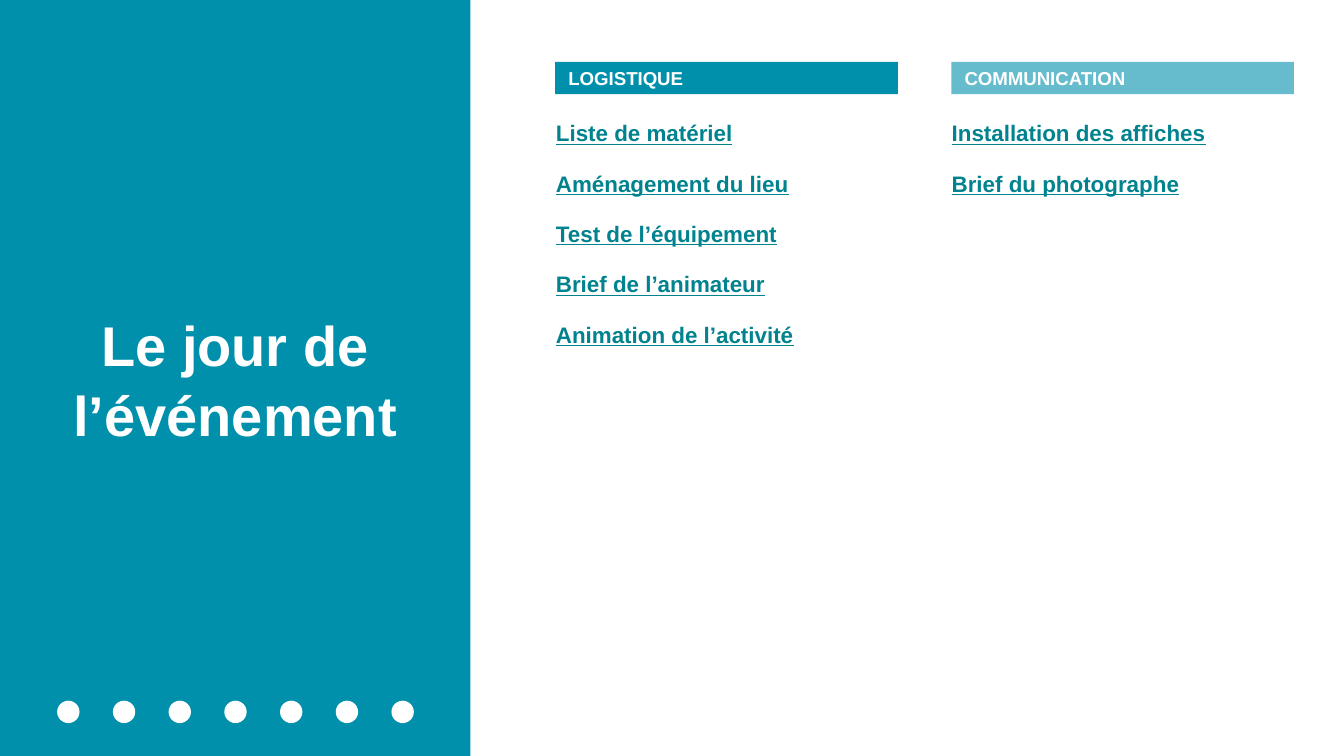
from lxml import etree
from pptx import Presentation
from pptx.dml.color import RGBColor
from pptx.enum.shapes import MSO_SHAPE
from pptx.enum.text import MSO_ANCHOR, PP_ALIGN
from pptx.oxml.ns import qn
from pptx.util import Pt

RECT, OVAL = MSO_SHAPE.RECTANGLE, MSO_SHAPE.OVAL
TOP, MIDDLE = MSO_ANCHOR.TOP, MSO_ANCHOR.MIDDLE
LEFT, CENTER = PP_ALIGN.LEFT, PP_ALIGN.CENTER

FONT = "Arial"
BLUE, WHITE, TEAL = "0090AC", "FFFFFF", "00838F"
LINE_SPACING = 1.04
PANEL_WIDTH = 252
COLUMN_WIDTH = 183.6
DOT_COUNT, DOT_SIZE, DOT_PITCH = 7, 12, 29.85

# left edge of header, left edge of list, header opacity in percent, header, tasks
COLUMNS = [
    (297.4, 297.8, 100, "LOGISTIQUE",
     ["Liste de matériel", "Aménagement du lieu", "Test de l’équipement",
      "Brief de l’animateur", "Animation de l’activité"]),
    (509.6, 509.8, 60, "COMMUNICATION",
     ["Installation des affiches", "Brief du photographe"]),
]


def rgb(color):
    return RGBColor.from_string(color)


def add_shape(slide, kind, x, y, w, h, color, opacity=100):
    sp = slide.shapes.add_shape(kind, Pt(x), Pt(y), Pt(w), Pt(h))
    sp.shadow.inherit = False
    sp.line.fill.background()
    sp.fill.solid()
    sp.fill.fore_color.rgb = rgb(color)
    if opacity < 100:
        clr = sp.fill._xPr.find(f".//{qn('a:srgbClr')}")
        etree.SubElement(clr, qn("a:alpha"), val=str(opacity * 1000))
    return sp


def set_text(sp, lines, size, color, align=LEFT, anchor=MIDDLE, inset=7.2,
             space_before=0, underline=False):
    tf = sp.text_frame
    tf.word_wrap = True
    tf.vertical_anchor = anchor
    tf.margin_left = tf.margin_right = Pt(inset)
    tf.margin_top = tf.margin_bottom = Pt(inset)
    tf.text = "\n".join(lines)
    for i, p in enumerate(tf.paragraphs):
        p.alignment = align
        p.line_spacing = LINE_SPACING
        p.space_before = Pt(space_before if i else 0)
        font = p.runs[0].font
        font.name, font.size, font.bold = FONT, Pt(size), True
        font.underline = underline
        font.color.rgb = rgb(color)


def add_text(slide, x, y, w, h, lines, size, color, **style):
    sp = slide.shapes.add_textbox(Pt(x), Pt(y), Pt(w), Pt(h))
    set_text(sp, lines, size, color, **style)


def add_column(slide, header_x, list_x, opacity, header, tasks):
    sp = add_shape(slide, RECT, header_x, 33.2, COLUMN_WIDTH, 17.2, BLUE, opacity)
    set_text(sp, [header], 10, WHITE)
    add_text(slide, list_x, 63.4, COLUMN_WIDTH, 329.8, tasks, 12, TEAL,
             anchor=TOP, inset=0, space_before=12, underline=True)


def add_dots(slide):
    for i in range(DOT_COUNT):
        add_shape(slide, OVAL, 30.6 + i * DOT_PITCH, 375.4, DOT_SIZE, DOT_SIZE, WHITE)


def main():
    prs = Presentation()
    prs.slide_width, prs.slide_height = Pt(720), Pt(405)
    slide = prs.slides.add_slide(prs.slide_layouts[6])
    slide.background.fill.solid()
    slide.background.fill.fore_color.rgb = rgb(BLUE)

    add_shape(slide, RECT, PANEL_WIDTH, 0, 720 - PANEL_WIDTH, 405, WHITE)
    add_text(slide, 0, 131.8, PANEL_WIDTH, 141.1, ["Le jour de l’événement"],
             30, WHITE, align=CENTER)
    for column in COLUMNS:
        add_column(slide, *column)
    add_dots(slide)
    prs.save("out.pptx")


if __name__ == "__main__":
    main()
